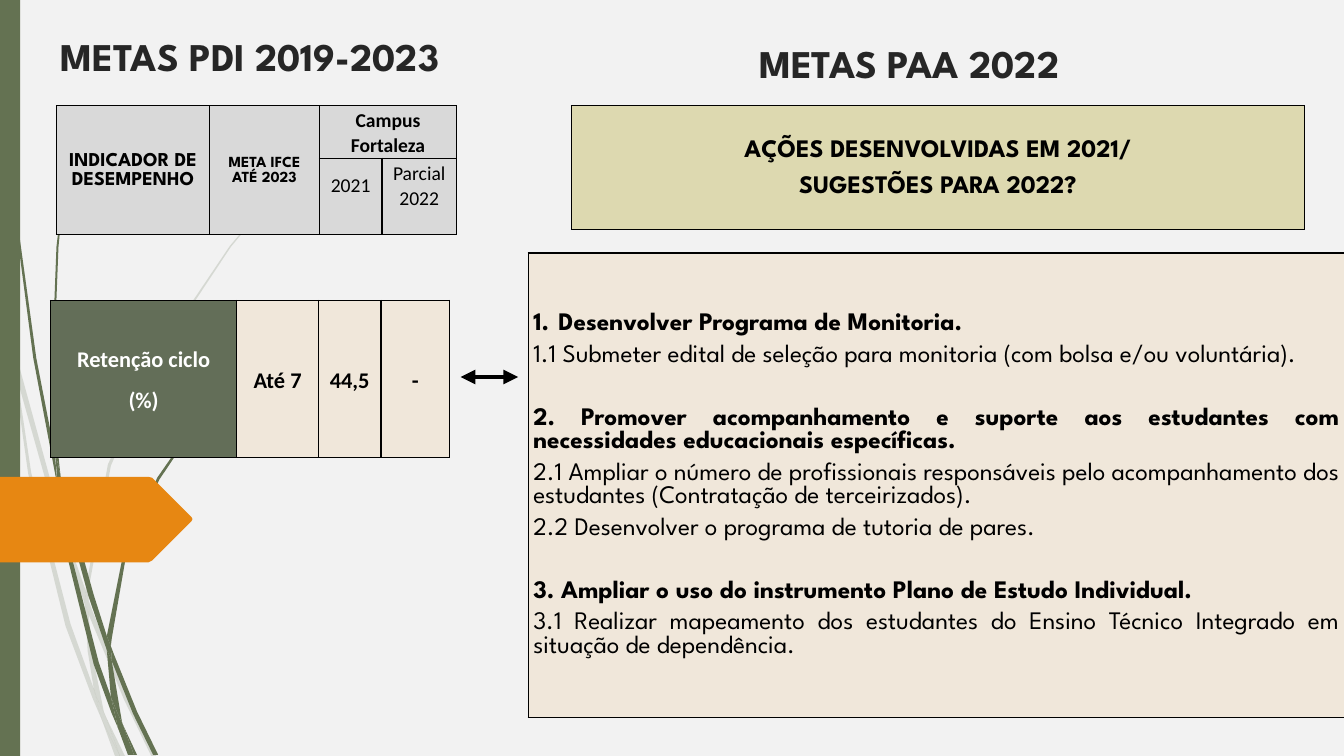
from lxml import etree
from pptx import Presentation
from pptx.dml.color import RGBColor
from pptx.enum.shapes import MSO_CONNECTOR, MSO_SHAPE
from pptx.enum.text import MSO_ANCHOR, PP_ALIGN
from pptx.oxml.ns import qn
from pptx.util import Inches, Pt

SPARTAN, CALIBRI = "League Spartan", "Calibri"
GREEN, ORANGE, BLACK, INK, WHITE = "647252", "E78712", "000000", "262626", "FFFFFF"
GREY, OLIVE, SAND, MOSS = "D9D9D9", "DDD9B0", "F0E7DA", "636E58"
COLS, ROWS = 133.33, 75  # square grid cells over the whole slide

# Outlines as (column, row) points
PALE_WISPS = [
    [(1.1, 35), (.9, 32.2), (0, 28.2), (0, 29.9), (1, 34.4)],
    [(5.8, 52.2), (8.4, 59.9), (8.5, 58.6), (6.2, 52), (1.4, 34.5), (1.7, 37.6)],
    [(9.2, 60.7), (8.8, 59.6), (8.8, 61), (12.3, 69.4), (15, 75), (15.5, 75), (12.7, 69.2)],
    [(11.9, 75), (12.4, 75), (10.5, 71.1)],
    [(9.3, 68.3), (7, 61.9), (3.1, 46.9), (1.7, 37.6), (1.1, 35), (2.8, 47),
     (6.5, 62.1), (9.2, 69.3), (10.1, 71.4), (9.9, 70.7)],
    [(8.4, 59.9), (8.7, 64.6), (9.3, 68.3), (9.6, 69.2), (10.5, 71.1), (10.3, 70.6),
     (9.1, 64.6), (8.8, 61), (8.8, 60.8)],
    [(8.8, 58.4), (11, 46.2), (16, 34.9), (22.9, 24.5), (26.8, 19.8), (29, 17.5),
     (31.2, 15.4), (31.2, 15.3), (28.9, 17.5), (26.8, 19.7), (22.8, 24.4), (15.8, 34.8),
     (10.7, 46.1), (8.5, 58.4), (8.5, 58.6), (8.8, 59.6)],
    [(10.1, 71.4), (11.4, 75), (11.9, 75)],
    [(8.8, 60.8), (8.8, 61), (8.8, 59.6), (8.5, 58.6), (8.4, 59.9)],
    [(9.6, 69.2), (9.3, 68.3), (9.9, 70.7), (10.1, 71.4), (11.9, 75), (10.5, 71.1)],
]
GREEN_WISPS = [
    [(.7, 11), (1.7, 23.3), (3.3, 35.5), (5.6, 47.7), (5.7, 48.1), (5.5, 45.7),
     (5.5, 45.3), (3.6, 35.5), (1.9, 23.2), (.8, 10.9), (.5, 4.8), (.4, 0), (.3, 0), (.4, 4.8)],
    [(8.8, 59.2), (10.6, 64.5), (10.6, 63.1), (9.3, 59), (6, 47.2), (6.4, 50.5)],
    [(11.3, 64.9), (11, 64.1), (11.1, 65.6), (13.2, 70.8), (15.2, 74.9), (15.7, 74.9),
     (13.6, 70.6)],
    [(11, 69.1), (9.8, 65.7), (7.2, 55.6), (6.4, 50.5), (5.7, 47.7), (6.8, 55.7),
     (9.3, 65.9), (11.1, 70.8), (11.7, 72.2), (11.6, 71.7)],
    [(6, 47.2), (5.8, 45.3), (5.4, 34.9), (5.8, 24.5), (6.3, 19.3), (7, 14.1), (6.2, 19.3),
     (5.6, 24.5), (5.2, 34.9), (5.5, 44.9)],
    [(13.3, 74.9), (13.6, 74.9), (12.2, 71.9)],
    [(5.7, 47.7), (6.4, 50.5), (6, 47.2), (5.5, 44.9), (5.5, 45.3)],
    [(11.1, 63.3), (12.5, 55.2), (15.8, 47.6), (20.5, 40.6), (23.1, 37.4), (24.5, 35.9),
     (26.1, 34.4), (26, 34.4), (24.5, 35.8), (23.1, 37.3), (20.4, 40.5), (15.6, 47.4),
     (12.2, 55.1), (10.6, 63.1), (11, 64.1)],
    [(11.7, 72.2), (12.7, 74.9), (13.1, 74.9)],
    [(10.6, 64.5), (11, 69.1), (11.6, 70.6), (12.2, 71.9), (12.1, 71.6), (11.1, 65.6),
     (10.9, 65.1)],
    [(10.6, 64.5), (10.9, 65.1), (11.1, 65.6), (11, 64.1), (10.6, 63.1)],
    [(11.6, 70.6), (11, 69.1), (11.6, 71.7), (11.7, 72.2), (13, 74.9), (13.3, 74.9),
     (12.2, 71.9)],
]
TAG = [(0, 47.3), (14.7, 47.3), (15.1, 47.4), (19, 51.3), (19.1, 51.5), (19, 51.7),
       (15.1, 55.6), (14.7, 55.8), (0, 55.8)]


def rgb(value):
    return RGBColor.from_string(value)


class Board:
    def __init__(self, prs, background):
        prs.slide_width, prs.slide_height = Inches(13.33), Inches(7.5)
        self.width, self.height = prs.slide_width, prs.slide_height
        self.s = prs.slides.add_slide(prs.slide_layouts[6])
        self.s.background.fill.solid()
        self.s.background.fill.fore_color.rgb = rgb(background)

    def x(self, col):
        return round(col / COLS * self.width)

    def y(self, row):
        return round(row / ROWS * self.height)

    def box(self, left, top, width, height):
        return self.x(left), self.y(top), self.x(width), self.y(height)

    def paint(self, sp, fill, alpha=None):
        sp.shadow.inherit = False
        sp.fill.solid()
        sp.fill.fore_color.rgb = rgb(fill)
        sp.line.fill.background()
        if alpha:
            clr = sp._element.spPr.find(qn("a:solidFill"))[0]
            etree.SubElement(clr, qn("a:alpha"), val=str(alpha * 1000))

    def outline(self, points, fill, alpha=None):
        pts = [(self.x(c), self.y(r)) for c, r in points]
        builder = self.s.shapes.build_freeform(*pts[0], scale=1.0)
        builder.add_line_segments(pts[1:], close=True)
        self.paint(builder.convert_to_shape(), fill, alpha)

    def rect(self, box, fill):
        self.paint(self.s.shapes.add_shape(MSO_SHAPE.RECTANGLE, *self.box(*box)), fill)

    def font(self, p, size, name, color, bold):
        p.font.size, p.font.name, p.font.bold = Pt(size), name, bold
        p.font.color.rgb = rgb(color)

    def title(self, box, text, anchor):
        tf = self.s.shapes.add_textbox(*self.box(*box)).text_frame
        tf.word_wrap, tf.vertical_anchor = True, anchor
        p = tf.paragraphs[0]
        p.text, p.alignment = text, PP_ALIGN.CENTER
        self.font(p, 28, SPARTAN, INK, True)

    def arrow(self, start, end, row):
        line = self.s.shapes.add_connector(
            MSO_CONNECTOR.STRAIGHT, self.x(start), self.y(row), self.x(end), self.y(row))
        line.line.color.rgb, line.line.width = rgb(BLACK), Pt(3.5)
        ln = line._element.spPr.find(qn("a:ln"))
        for end_tag in ("a:headEnd", "a:tailEnd"):
            etree.SubElement(ln, qn(end_tag), type="triangle")
        etree.SubElement(line._element.spPr, qn("a:effectLst"))

    def table(self, left, top, cols, rows, fill, merges=()):
        box = self.box(left, top, sum(cols), sum(rows))
        table = self.s.shapes.add_table(len(rows), len(cols), *box).table
        for column, width in zip(table.columns, cols):
            column.width = self.x(width)
        for row, height in zip(table.rows, rows):
            row.height = self.y(height)
        for cell in table.iter_cells():
            cell.fill.solid()
            cell.fill.fore_color.rgb = rgb(fill)
            cell.vertical_anchor = MSO_ANCHOR.MIDDLE
            cell.margin_left = cell.margin_right = Inches(.05)
            cell.margin_top, cell.margin_bottom = Inches(.01), 0
            for i, side in enumerate("LRTB"):
                ln = etree.Element(qn(f"a:ln{side}"), w=str(Pt(1)))
                solid = etree.SubElement(ln, qn("a:solidFill"))
                etree.SubElement(solid, qn("a:srgbClr"), val=BLACK)
                cell._tc.get_or_add_tcPr().insert(i, ln)
        for first, last in merges:
            table.cell(*first).merge(table.cell(*last))
        return table

    def label(self, cell, lines, size, name, color=BLACK, bold=True, after=8):
        tf = cell.text_frame
        for i, text in enumerate(lines):
            p = tf.add_paragraph() if i else tf.paragraphs[0]
            p.text, p.alignment = text, PP_ALIGN.CENTER
            p.line_spacing, p.space_after = 1.07, Pt(after)
            self.font(p, size, name, color, bold)

    def actions(self, cell, groups):
        tf = cell.text_frame
        for g, group in enumerate(groups):
            for i, text in enumerate(group):
                p = tf.add_paragraph() if g or i else tf.paragraphs[0]
                p.text, p.alignment, p.space_after = text, PP_ALIGN.JUSTIFY, Pt(6)
                if g and not i:
                    p.space_before = Pt(22.5)
                self.font(p, 18, SPARTAN, BLACK, i == 0)
        # The first heading takes its number from the list
        pPr = tf.paragraphs[0]._p.get_or_add_pPr()
        pPr.set("marL", str(Inches(.25)))
        pPr.set("indent", str(-Inches(.25)))
        bullet = etree.Element(qn("a:buAutoNum"), type="arabicPeriod")
        pPr.find(qn("a:defRPr")).addprevious(bullet)


def main():
    prs = Presentation()
    board = Board(prs, "F2F2F2")

    # Side decoration
    for wisp in PALE_WISPS:
        board.outline(wisp, GREEN, 20)
    for wisp in GREEN_WISPS:
        board.outline(wisp, GREEN)
    board.rect((0, 0, 2, 75), GREEN)
    board.outline(TAG, ORANGE)

    # Indicator values
    values = board.table(5, 29.8, (18.5, 8.1, 6.2, 6.8), (15.6,), SAND)
    values.cell(0, 0).fill.fore_color.rgb = rgb(MOSS)
    board.label(values.cell(0, 0), ("Retenção ciclo", "(%)"), 16, CALIBRI, WHITE)
    for col, text in enumerate(("Até 7", "44,5", "-"), 1):
        board.label(values.cell(0, col), (text,), 16, CALIBRI)

    # Planned actions
    plan = board.table(52.4, 25.1, (81,), (46.1,), SAND)
    board.actions(plan.cell(0, 0), (
        ("Desenvolver Programa de Monitoria.",
         "1.1 Submeter edital de seleção para monitoria (com bolsa e/ou voluntária)."),
        ("2. Promover acompanhamento e suporte aos estudantes com necessidades educacionais específicas.",
         "2.1 Ampliar o número de profissionais responsáveis pelo acompanhamento dos estudantes (Contratação de terceirizados).",
         "2.2 Desenvolver o programa de tutoria de pares."),
        ("3. Ampliar o uso do instrumento Plano de Estudo Individual.",
         "3.1 Realizar mapeamento dos estudantes do Ensino Técnico Integrado em situação de dependência.")))
    board.arrow(45.7, 51.4, 37.4)

    # Titles and column heads
    board.title((-2.7, .6, 55, 9.9), "METAS PDI 2019-2023", MSO_ANCHOR.MIDDLE)
    ask = board.table(56.7, 10.5, (72.7,), (12.3,), OLIVE)
    board.label(ask.cell(0, 0), ("AÇÕES DESENVOLVIDAS EM 2021/", "SUGESTÕES PARA 2022?"), 18, SPARTAN)
    board.title((64.1, 2.1, 52.2, 7), "METAS PAA 2022", MSO_ANCHOR.BOTTOM)
    heads = board.table(5.6, 10.5, (15.2, 10.9, 6.2, 7.4), (5.2, 7.6), GREY,
                        (((0, 0), (1, 0)), ((0, 1), (1, 1)), ((0, 2), (0, 3))))
    board.label(heads.cell(0, 0), ("INDICADOR DE DESEMPENHO",), 14, SPARTAN)
    board.label(heads.cell(0, 1), ("META IFCE", "ATÉ 2023"), 11, SPARTAN, after=0)
    board.label(heads.cell(0, 2), ("Campus Fortaleza",), 14, CALIBRI, after=0)
    for col, text in ((2, "2021"), (3, "Parcial 2022")):
        board.label(heads.cell(1, col), (text,), 14, CALIBRI, bold=False, after=0)
        heads.cell(1, col).margin_bottom = Inches(.23)

    prs.save("out.pptx")


if __name__ == "__main__":
    main()
